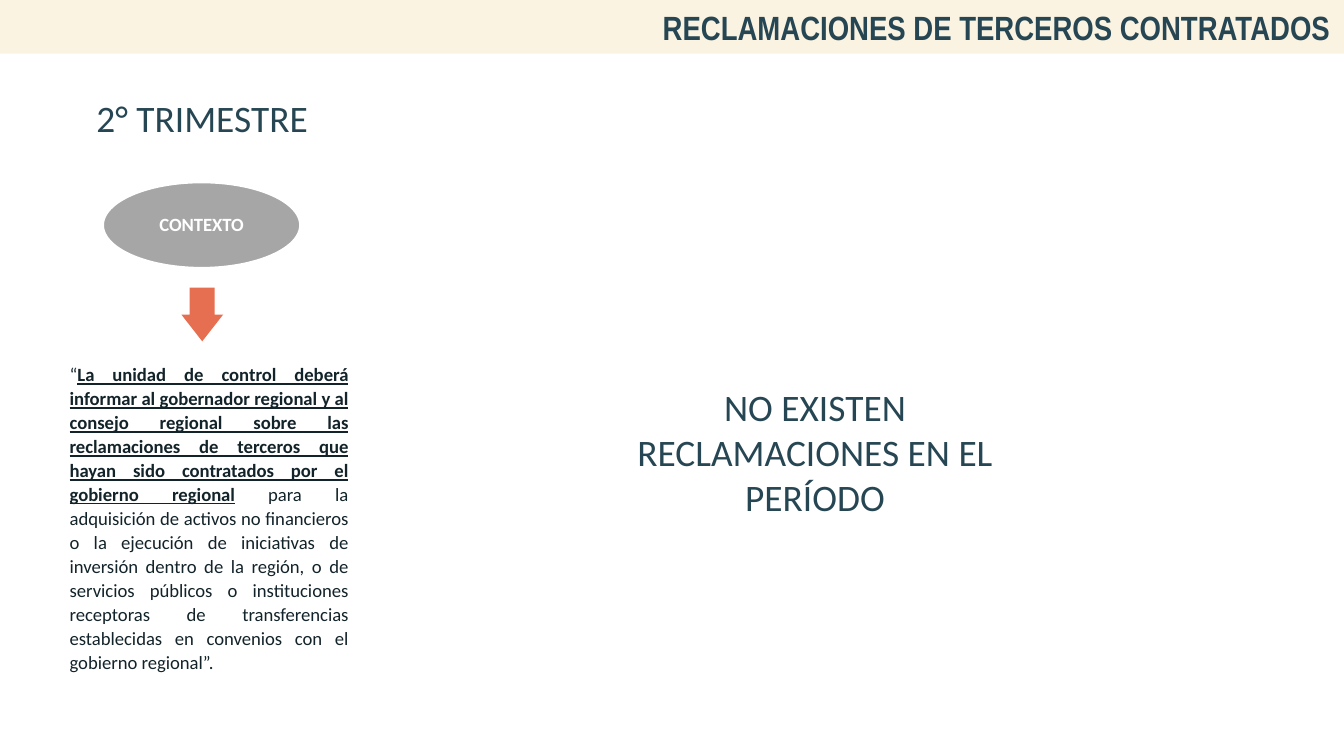
from dataclasses import dataclass

from pptx import Presentation
from pptx.dml.color import RGBColor
from pptx.enum import shapes, text
from pptx.util import Inches, Pt

ALIGN = text.PP_ALIGN


@dataclass(frozen=True)
class Theme:
    cream: str = "FBF3E1"
    navy: str = "264653"
    ink: str = "13232A"
    grey: str = "A6A6A6"
    coral: str = "E76F51"
    white: str = "FFFFFF"
    body_font: str = "Calibri"
    title_font: str = "Arial Narrow"
    title: int = 18
    heading: int = 20
    body: int = 10


THEME = Theme()


def paint(sp, color):
    sp.fill.solid()
    sp.fill.fore_color.rgb = RGBColor.from_string(color)


def set_frame(tf, anchor, inset_x, inset_y):
    tf.word_wrap = True
    tf.auto_size = text.MSO_AUTO_SIZE.NONE
    tf.vertical_anchor = anchor
    tf.margin_left = tf.margin_right = Inches(inset_x)
    tf.margin_top = tf.margin_bottom = Inches(inset_y)


def add_run(p, words, size, color, font=THEME.body_font, bold=False, underline=False):
    r = p.add_run()
    r.text = words
    r.font.name = font
    r.font.size = Pt(size)
    r.font.bold = bold
    r.font.underline = underline
    r.font.color.rgb = RGBColor.from_string(color)


def add_title(s, words):
    sp = s.shapes.title
    sp.left, sp.top, sp.width, sp.height = 0, 0, Inches(10), Inches(0.4)
    paint(sp, THEME.cream)
    set_frame(sp.text_frame, text.MSO_ANCHOR.MIDDLE, 0.1, 0.1)
    p = sp.text_frame.paragraphs[0]
    p.alignment = ALIGN.RIGHT
    p.line_spacing = 1.0
    p.space_before = Pt(0)
    add_run(p, words, THEME.title, THEME.navy, THEME.title_font, bold=True)


def add_text_box(s, left, top, width, height, align):
    """Add an empty text box and return its paragraph."""
    sp = s.shapes.add_textbox(Inches(left), Inches(top), Inches(width), Inches(height))
    set_frame(sp.text_frame, text.MSO_ANCHOR.TOP, 0.1, 0.05)
    p = sp.text_frame.paragraphs[0]
    p.alignment = align
    return p


def add_heading(s, left, top, height, words):
    p = add_text_box(s, left, top, 3.27, height, ALIGN.CENTER)
    add_run(p, words, THEME.heading, THEME.navy)


def add_preset(s, kind, left, top, width, height, color):
    sp = s.shapes.add_shape(kind, Inches(left), Inches(top), Inches(width), Inches(height))
    sp.shadow.inherit = False
    paint(sp, color)
    sp.line.fill.background()
    return sp


def add_arrow(s):
    sp = add_preset(s, shapes.MSO_SHAPE.DOWN_ARROW, 1.35, 2.14, 0.31, 0.4, THEME.coral)
    sp.adjustments[0] = 0.6
    sp.adjustments[1] = 0.64


def add_context_oval(s, words):
    sp = add_preset(s, shapes.MSO_SHAPE.OVAL, 0.76, 1.35, 1.48, 0.65, THEME.grey)
    sp.line.color.rgb = RGBColor.from_string(THEME.white)
    sp.line.width = Pt(2)
    set_frame(sp.text_frame, text.MSO_ANCHOR.MIDDLE, 0.1, 0.1)
    p = sp.text_frame.paragraphs[0]
    p.alignment = ALIGN.CENTER
    p.line_spacing = 0.9
    add_run(p, words, THEME.body, THEME.white, bold=True)


def add_quote(s):
    p = add_text_box(s, 0.42, 2.64, 2.27, 2.62, ALIGN.JUSTIFY)
    p.line_spacing = 1.07
    add_run(p, "“", THEME.body, THEME.ink)
    add_run(p, "La unidad de control deberá informar al gobernador regional y al "
               "consejo regional sobre las reclamaciones de terceros que hayan sido "
               "contratados por el gobierno regional",
            THEME.body, THEME.ink, bold=True, underline=True)
    add_run(p, " para la adquisición de activos no financieros o la ejecución de "
               "iniciativas de inversión dentro de la región, o de servicios públicos "
               "o instituciones receptoras de transferencias establecidas en convenios "
               "con el gobierno regional”.",
            THEME.body, THEME.ink)


def main():
    prs = Presentation()
    prs.slide_width = Inches(10)
    prs.slide_height = prs.slide_width * 9 // 16
    s = prs.slides.add_slide(prs.slide_layouts.get_by_name("Title Only"))
    add_title(s, "RECLAMACIONES DE TERCEROS CONTRATADOS")
    add_heading(s, -0.13, 0.66, 0.44, "2° TRIMESTRE")
    add_arrow(s)
    add_context_oval(s, "CONTEXTO")
    add_quote(s)
    add_heading(s, 4.43, 2.81, 1.11, "NO EXISTEN RECLAMACIONES EN EL PERÍODO")
    prs.save("out.pptx")


if __name__ == "__main__":
    main()
